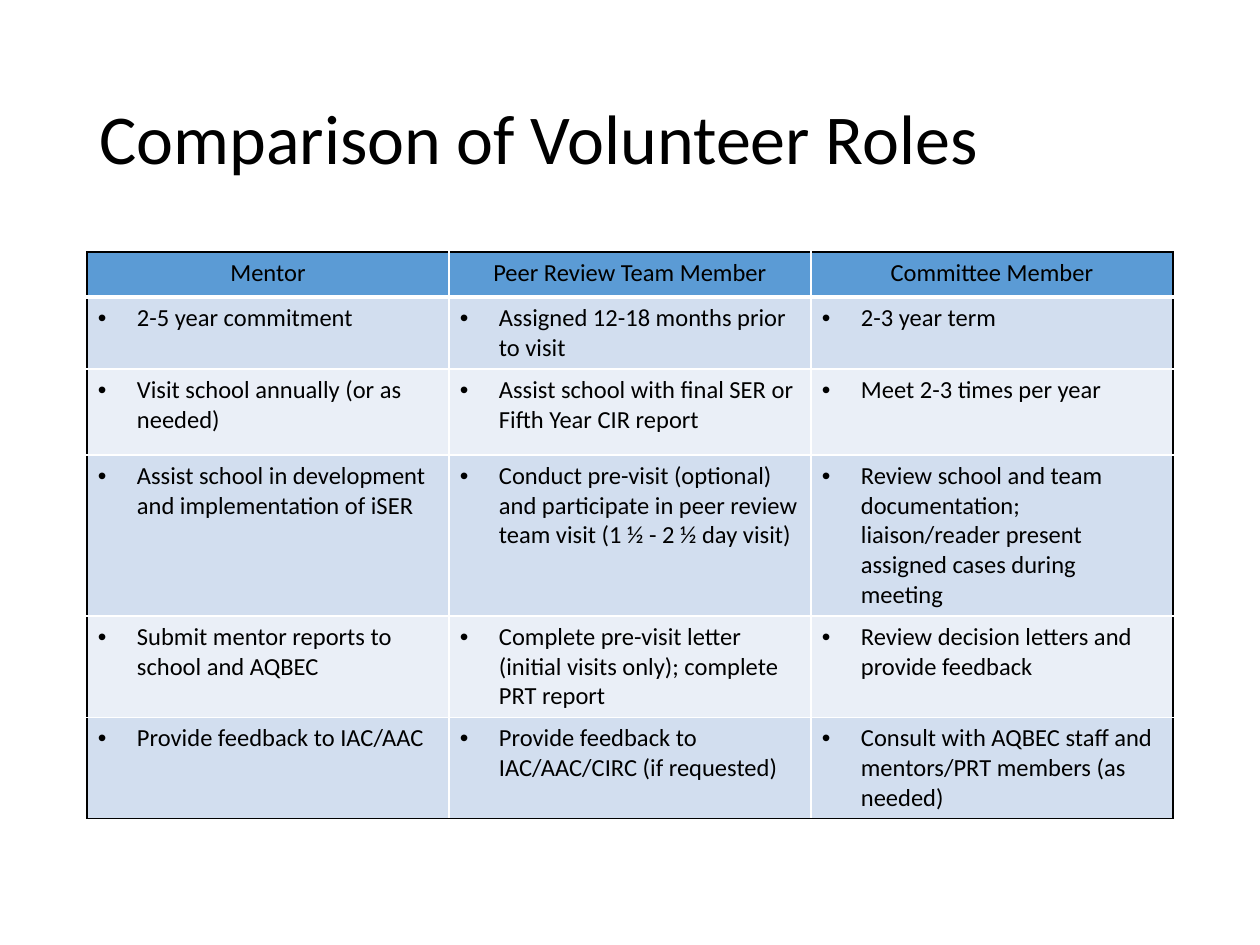
from lxml import etree
from pptx import Presentation
from pptx.dml.color import RGBColor
from pptx.enum.text import MSO_ANCHOR, PP_ALIGN
from pptx.oxml.ns import qn
from pptx.util import Pt

EMU_PER_PX = 914400 / 126
LEFT, CENTER = PP_ALIGN.LEFT, PP_ALIGN.CENTER
MIDDLE = MSO_ANCHOR.MIDDLE

FONT = "Calibri"
BLACK, WHITE = "000000", "FFFFFF"
HEADER_FILL = "5B9BD5"
BAND_FILLS = ["EAEFF7", "D2DEEF"]

COL_WIDTH = 362
ROW_HEIGHTS = [45, 72, 86, 130, 101, 101]
BULLET_INDENT = 39
ROLES = [
    ["Mentor", "Peer Review Team Member", "Committee Member"],
    ["2-5 year commitment",
     "Assigned 12-18 months prior to visit",
     "2-3 year term"],
    ["Visit school annually (or as needed)",
     "Assist school with final SER or Fifth Year CIR report",
     "Meet 2-3 times per year"],
    ["Assist school in development and implementation of iSER",
     "Conduct pre-visit (optional) and participate in peer review team visit "
     "(1 ½ - 2 ½ day visit)",
     "Review school and team documentation; liaison/reader present assigned "
     "cases during meeting"],
    ["Submit mentor reports to school and AQBEC",
     "Complete pre-visit letter (initial visits only); complete PRT report",
     "Review decision letters and provide feedback"],
    ["Provide feedback to IAC/AAC",
     "Provide feedback to IAC/AAC/CIRC (if requested)",
     "Consult with AQBEC staff and mentors/PRT members (as needed)"],
]


def px(n):
    return round(n * EMU_PER_PX)


def color(value):
    return RGBColor.from_string(value)


def format_runs(p, size):
    for r in p.runs:
        r.font.name = FONT
        r.font.size = Pt(size)
        r.font.color.rgb = color(BLACK)


def add_bullet(p):
    pPr = p._p.get_or_add_pPr()
    pPr.set("marL", str(px(BULLET_INDENT)))
    pPr.set("indent", str(-px(BULLET_INDENT)))
    etree.SubElement(pPr, qn("a:buFont"), typeface="Arial")
    etree.SubElement(pPr, qn("a:buChar"), char="•")


def set_borders(cell, borders):
    """Draw borders given as (side, colour, width in points), in L, R, T, B order."""
    tcPr = cell._tc.get_or_add_tcPr()
    for i, (side, line_color, width) in enumerate(borders):
        ln = etree.Element(qn(f"a:ln{side}"), w=str(Pt(width)))
        fill = etree.SubElement(ln, qn("a:solidFill"))
        etree.SubElement(fill, qn("a:srgbClr"), val=line_color)
        tcPr.insert(i, ln)


def set_title(slide, text):
    title = slide.shapes.title
    title.left, title.top, title.width, title.height = map(px, (87, 50, 1086, 183))
    tf = title.text_frame
    tf.text = text
    tf.vertical_anchor = MIDDLE
    p = tf.paragraphs[0]
    p.alignment = LEFT
    p.line_spacing = 0.9
    format_runs(p, 40)


def fill_cell(cell, text, row, col):
    last_row, last_col = len(ROLES) - 1, len(ROLES[0]) - 1
    is_header = row == 0
    cell.fill.solid()
    cell.fill.fore_color.rgb = color(HEADER_FILL if is_header else BAND_FILLS[row % 2])
    cell.margin_left = cell.margin_right = px(11)
    cell.margin_top = cell.margin_bottom = px(6)
    set_borders(cell, [
        ("L", BLACK if col == 0 else WHITE, 1),
        ("R", BLACK if col == last_col else WHITE, 1),
        ("T", BLACK if is_header else WHITE, 1),
        ("B", BLACK if row == last_row else WHITE, 3 if is_header else 1),
    ])
    cell.text_frame.text = text
    p = cell.text_frame.paragraphs[0]
    if is_header:
        p.alignment = CENTER
    else:
        add_bullet(p)
    format_runs(p, 14)


def add_roles_table(slide):
    n_rows, n_cols = len(ROLES), len(ROLES[0])
    frame = slide.shapes.add_table(n_rows, n_cols, px(87), px(252),
                                   px(COL_WIDTH * n_cols), px(sum(ROW_HEIGHTS)))
    table = frame.table
    for column in table.columns:
        column.width = px(COL_WIDTH)
    for row, texts in enumerate(ROLES):
        table.rows[row].height = px(ROW_HEIGHTS[row])
        for col, text in enumerate(texts):
            fill_cell(table.cell(row, col), text, row, col)


def main():
    prs = Presentation()
    prs.slide_width, prs.slide_height = px(1260), px(945)
    slide = prs.slides.add_slide(prs.slide_layouts[5])
    set_title(slide, "Comparison of Volunteer Roles")
    add_roles_table(slide)
    prs.save("out.pptx")


if __name__ == "__main__":
    main()
